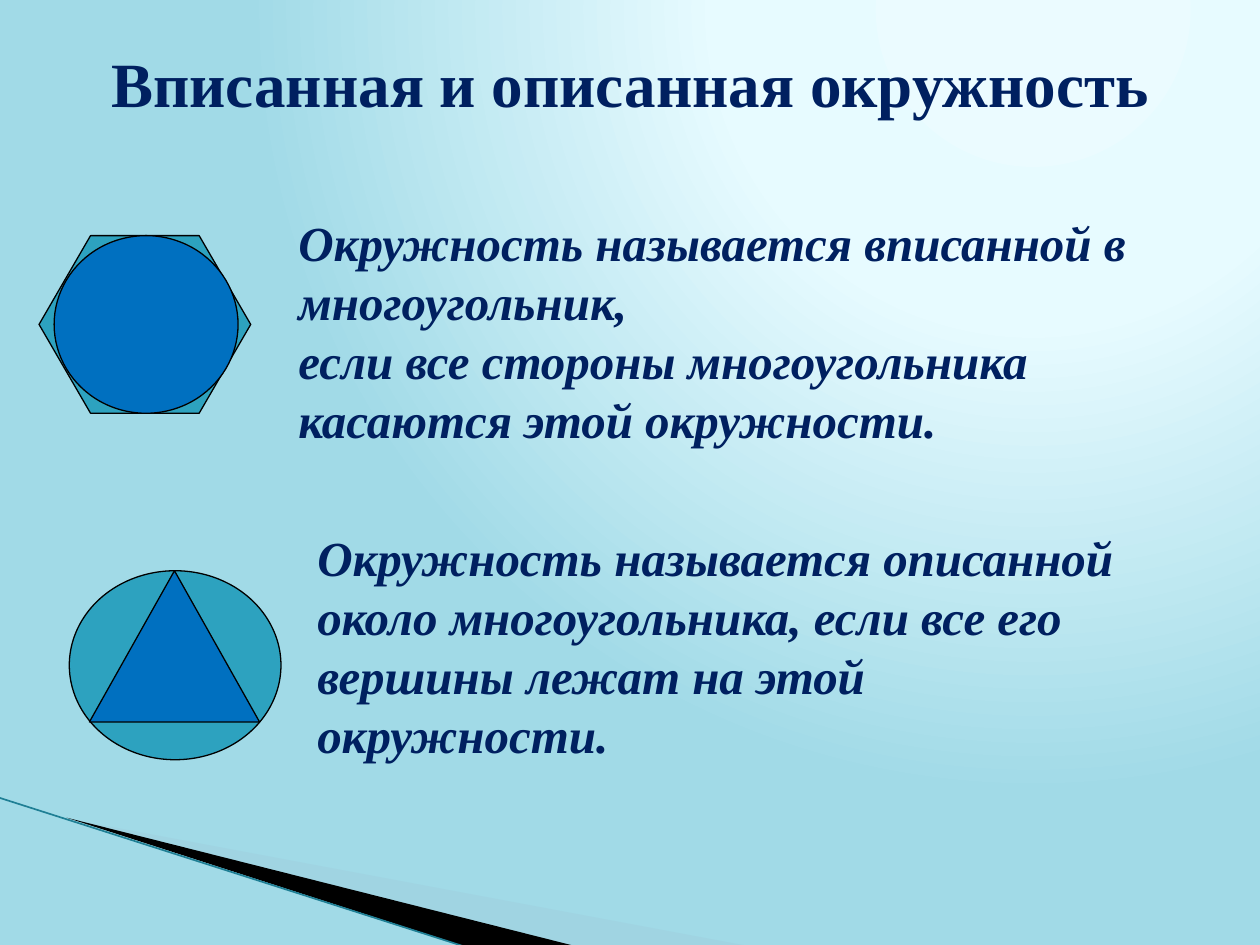
from lxml import etree
from pptx import Presentation
from pptx.dml.color import RGBColor
from pptx.enum.shapes import MSO_CONNECTOR, MSO_SHAPE
from pptx.enum.text import MSO_ANCHOR, PP_ALIGN
from pptx.oxml import parse_xml
from pptx.oxml.ns import nsdecls, qn
from pptx.util import Inches, Pt

HEXAGON, OVAL = MSO_SHAPE.HEXAGON, MSO_SHAPE.OVAL
TRIANGLE = MSO_SHAPE.ISOSCELES_TRIANGLE
STRAIGHT = MSO_CONNECTOR.STRAIGHT
TOP = MSO_ANCHOR.TOP
LEFT, CENTER = PP_ALIGN.LEFT, PP_ALIGN.CENTER

THEME = {
    "font": "Times New Roman", "title": 36, "body": 28,
    "text": "002060", "outer": "2DA2BF", "inner": "0070C0",
    "outline": "000000", "wedge": "000000", "haze": "A0CBDC", "edge": "1F7F95",
    "background": [(0, "EBFBFF"), (40, "E7FBFF"), (100, "A1DAE7")],
}

# Content: boxes are left, top, width, height in inches
TITLE = ("Вписанная и описанная окружность", (0.5, 0.3, 9, 1.25))
DEFINITIONS = [
    (["Окружность называется вписанной в многоугольник,",
      "если все стороны многоугольника касаются этой окружности."],
     (2.27, 1.64, 7.2, 1.99)),
    (["Окружность называется описанной около многоугольника, "
      "если все его вершины лежат на этой",
      "окружности."],
     (2.42, 4.14, 6.87, 1.99)),
]
FIGURES = [
    [(HEXAGON, (0.31, 1.87, 1.68, 1.41), "outer"),
     (OVAL, (0.43, 1.87, 1.46, 1.41), "inner")],
    [(OVAL, (0.55, 4.53, 1.68, 1.5), "outer"),
     (TRIANGLE, (0.71, 4.53, 1.35, 1.2), "inner")],
]
WEDGES = [
    ([(0.55, 6.5), (5.95, 7.51), (4.56, 7.51)], "haze", 40),
    ([(0.53, 6.49), (4.57, 7.51), (3.72, 7.52)], "wedge", 100),
]
EDGE = [(-0.01, 6.33), (3.71, 7.52)]


def color(name):
    return RGBColor.from_string(THEME[name])


def inches(values):
    return [Inches(v) for v in values]


def set_background(slide):
    stops = "".join(
        f'<a:gs pos="{pos * 1000}"><a:srgbClr val="{rgb}"/></a:gs>'
        for pos, rgb in THEME["background"])
    slide.background.fill.solid()
    bg_pr = slide.background._cSld.bg.bgPr
    bg_pr.replace(bg_pr[0], parse_xml(
        f'<a:gradFill {nsdecls("a")} rotWithShape="1"><a:gsLst>{stops}</a:gsLst>'
        '<a:path path="circle"><a:fillToRect l="65000" t="0" r="0" b="98000"/>'
        '</a:path></a:gradFill>'))


def write(tf, lines, size, align, italic):
    tf.word_wrap = True
    tf.vertical_anchor = TOP
    for i, line in enumerate(lines):
        p = tf.paragraphs[0] if i == 0 else tf.add_paragraph()
        p.text = line
        p.alignment = align
        font = p.font
        font.name, font.size = THEME["font"], Pt(THEME[size])
        font.bold, font.italic = True, italic
        font.color.rgb = color("text")


def add_wedge(slide, points, fill, opacity):
    start, *rest = [inches(pt) for pt in points]
    builder = slide.shapes.build_freeform(*start)
    builder.add_line_segments(rest)
    sp = builder.convert_to_shape()
    sp.shadow.inherit = False
    sp.fill.solid()
    sp.fill.fore_color.rgb = color(fill)
    sp.line.fill.background()
    if opacity < 100:
        rgb = sp.fill._xPr.find(qn("a:solidFill"))[0]
        etree.SubElement(rgb, qn("a:alpha")).set("val", str(opacity * 1000))


def add_figure(slide, parts):
    group = slide.shapes.add_group_shape()
    for kind, box, fill in parts:
        sp = group.shapes.add_shape(kind, *inches(box))
        if kind == HEXAGON:
            sp.adjustments[0] = 0.29
        sp.shadow.inherit = False
        sp.fill.solid()
        sp.fill.fore_color.rgb = color(fill)
        sp.line.color.rgb = color("outline")
        sp.line.width = Pt(0.75)


def main():
    prs = Presentation()
    prs.slide_width, prs.slide_height = Inches(10), Inches(7.5)
    slide = prs.slides.add_slide(prs.slide_layouts[5])
    set_background(slide)

    # Corner decoration
    for wedge in WEDGES:
        add_wedge(slide, *wedge)
    start, end = EDGE
    edge = slide.shapes.add_connector(STRAIGHT, *inches(start + end))
    edge.line.color.rgb = color("edge")
    edge.line.width = Pt(0.95)
    etree.SubElement(edge._element.spPr, qn("a:effectLst"))

    # Title
    text, box = TITLE
    title = slide.shapes.title
    title.left, title.top, title.width, title.height = inches(box)
    write(title.text_frame, [text], "title", CENTER, False)

    # Definitions and their figures
    for (lines, box), parts in zip(DEFINITIONS, FIGURES):
        tb = slide.shapes.add_textbox(*inches(box))
        write(tb.text_frame, lines, "body", LEFT, True)
        add_figure(slide, parts)

    prs.save("out.pptx")


if __name__ == "__main__":
    main()
